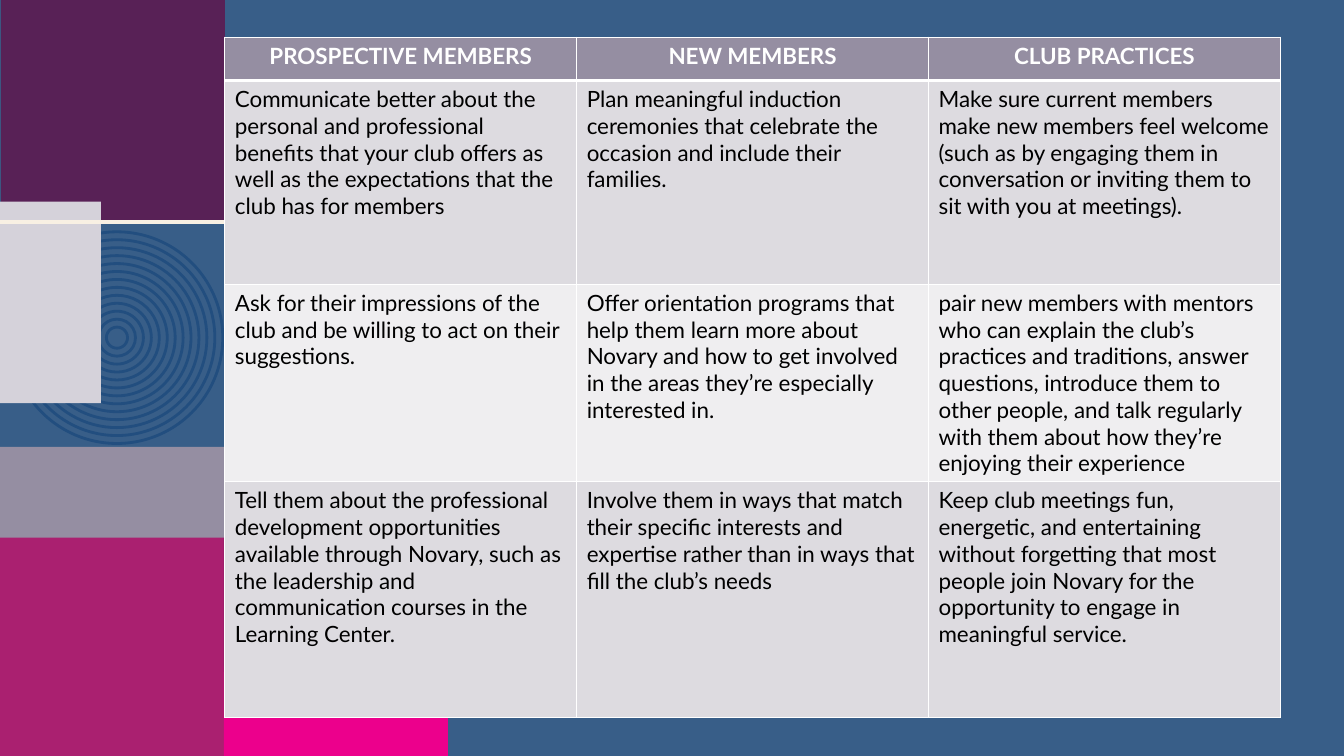
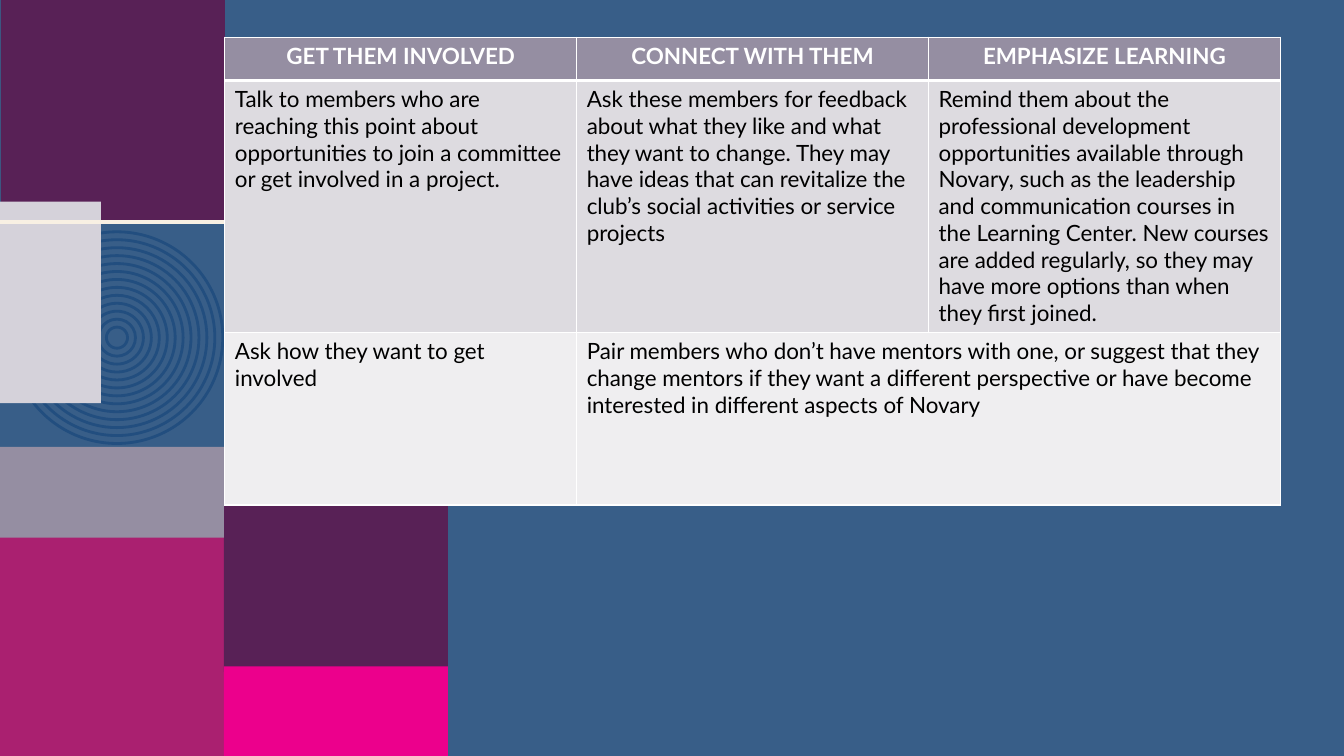
import dataclasses
import math

import lxml.etree
import pptx
import pptx.dml.color
import pptx.enum.shapes
import pptx.enum.text
import pptx.oxml.ns
import pptx.util

SHAPES = pptx.enum.shapes.MSO_SHAPE
CENTER = pptx.enum.text.PP_ALIGN.CENTER
WIDTH, HEIGHT = 13.33, 7.5
UNIT = WIDTH / 6  # side of one decorative tile


@dataclasses.dataclass(frozen=True)
class Theme:
    font: str = "Lato"
    size: int = 16
    background: str = "385E88"
    plum: str = "582156"
    magenta: str = "AA2070"
    pink: str = "EC008C"
    mauve: str = "958EA2"
    pale: str = "D5D2DA"
    ring: str = "224E7F"
    cream: str = "F8F0E3"
    white: str = "FFFFFF"
    black: str = "000000"
    bands: tuple = ("DDDBE0", "EFEEF0")
    thin: int = 1
    ring_line: int = 2
    thick: int = 3


THEME = Theme()

PAGES = [
    {
        "heights": [0.43, 2.02, 1.96, 2.34],
        "rows": [
            ["PROSPECTIVE MEMBERS", "NEW MEMBERS", "CLUB PRACTICES"],
            [
                "Communicate better about the personal and professional benefits that "
                "your club offers as well as the expectations that the club has for members",
                "Plan meaningful induction ceremonies that celebrate the occasion and "
                "include their families.",
                "Make sure current members make new members feel welcome (such as by "
                "engaging them in conversation or inviting them to sit with you at meetings).",
            ],
            [
                "Ask for their impressions of the club and be willing to act on their "
                "suggestions.",
                "Offer orientation programs that help them learn more about Novary and "
                "how to get involved in the areas they’re especially interested in.",
                "pair new members with mentors who can explain the club’s practices and "
                "traditions, answer questions, introduce them to other people, and talk "
                "regularly with them about how they’re enjoying their experience",
            ],
            [
                "Tell them about the professional development opportunities available "
                "through Novary, such as the leadership and communication courses in the "
                "Learning Center.",
                "Involve them in ways that match their specific interests and expertise "
                "rather than in ways that fill the club’s needs",
                "Keep club meetings fun, energetic, and entertaining without forgetting "
                "that most people join Novary for the opportunity to engage in meaningful "
                "service.",
            ],
        ],
    },
    {
        "heights": [0.43, 2.5, 1.71],
        "rows": [
            ["GET THEM INVOLVED", "CONNECT WITH THEM", "EMPHASIZE LEARNING"],
            [
                "Talk to members who are reaching this point about opportunities to join "
                "a committee or get involved in a project.",
                "Ask these members for feedback about what they like and what they want "
                "to change. They may have ideas that can revitalize the club’s social "
                "activities or service projects",
                "Remind them about the professional development opportunities available "
                "through Novary, such as the leadership and communication courses in the "
                "Learning Center. New courses are added regularly, so they may have more "
                "options than when they first joined.",
            ],
            [
                "Ask how they want to get involved",
                "Pair members who don’t have mentors with one, or suggest that they "
                "change mentors if they want a different perspective or have become "
                "interested in different aspects of Novary",
            ],
        ],
    },
]


def inches(*lengths):
    return [pptx.util.Inches(length) for length in lengths]


def rgb(color):
    return pptx.dml.color.RGBColor.from_string(color)


def paint(box, fill=None, line=None, weight=THEME.thin):
    box.shadow.inherit = False
    if fill:
        box.fill.solid()
        box.fill.fore_color.rgb = rgb(fill)
    else:
        box.fill.background()
    if line:
        box.line.color.rgb = rgb(line)
        box.line.width = pptx.util.Pt(weight)
    else:
        box.line.fill.background()


def add_tile(page, left, top, width, height, fill):
    box = page.shapes.add_shape(SHAPES.RECTANGLE, *inches(left, top, width, height))
    paint(box, fill)


def add_rings(page, x, y, widest, count):
    """Draw concentric circles, the smallest a tenth as wide as the widest."""
    step = 0.9 * widest / (count - 1)
    for index in range(count):
        size = widest - index * step
        ring = page.shapes.add_shape(
            SHAPES.OVAL, *inches(x - size / 2, y - size / 2, size, size))
        paint(ring, line=THEME.ring, weight=THEME.ring_line)


def add_half_disc(page, x, y, radius, fill, steps=60):
    """Draw the right half of a disc centred on x, y."""
    angles = [math.pi * (index / steps - 0.5) for index in range(steps + 1)]
    points = [(x + radius * math.cos(angle), y + radius * math.sin(angle))
              for angle in angles]
    builder = page.shapes.build_freeform(*points[0], scale=pptx.util.Inches(1))
    builder.add_line_segments(points[1:], close=True)
    paint(builder.convert_to_shape(), fill)


def add_rule(page, left, right, y, color, weight):
    rule = page.shapes.add_connector(
        pptx.enum.shapes.MSO_CONNECTOR.STRAIGHT, *inches(left, y, right, y))
    rule.line.color.rgb = rgb(color)
    rule.line.width = pptx.util.Pt(weight)
    lxml.etree.SubElement(rule._element.spPr, pptx.oxml.ns.qn("a:effectLst"))


def add_side_pattern(page):
    add_tile(page, 0.01, 0, UNIT, UNIT, THEME.plum)
    add_tile(page, 0, HEIGHT - UNIT, UNIT, UNIT, THEME.magenta)
    add_tile(page, UNIT, 2 * UNIT, UNIT, UNIT, THEME.plum)
    add_tile(page, UNIT, HEIGHT - 0.89, UNIT, 0.89, THEME.pink)
    add_tile(page, 0, 2.19, UNIT, UNIT, THEME.background)
    add_rings(page, 1.16, 3.35, widest=2.1, count=13)
    add_tile(page, 0, 2 * UNIT - 0.01, UNIT, 0.9, THEME.mauve)
    add_half_disc(page, -0.03, 3.3, UNIT / 2, THEME.pale)
    add_rule(page, 0, UNIT, 2.2, THEME.cream, THEME.thick)


def write(frame, text, *, color, bold=False, align=None):
    frame.word_wrap = True
    para = frame.paragraphs[0]
    para.alignment = align
    span = para.add_run()
    span.text = text
    span.font.name = THEME.font
    span.font.size = pptx.util.Pt(THEME.size)
    span.font.bold = bold
    span.font.color.rgb = rgb(color)


def set_borders(cell, color, **weights):
    """Give each side (L, R, T, B) a solid line, ahead of the cell's fill."""
    qn = pptx.oxml.ns.qn
    properties = cell._tc.get_or_add_tcPr()
    for index, side in enumerate("LRTB"):
        weight = pptx.util.Pt(weights.get(side, THEME.thin))
        line = lxml.etree.Element(qn("a:ln" + side), w=str(int(weight)))
        fill = lxml.etree.SubElement(line, qn("a:solidFill"))
        lxml.etree.SubElement(fill, qn("a:srgbClr"), val=color)
        properties.insert(index, line)


def add_practice_table(page, rows, heights):
    """Fill a table; a short row has its last cell run to the right edge."""
    columns = len(rows[0])
    table = page.shapes.add_table(
        len(rows), columns, *inches(2.23, 0.37, 10.47, sum(heights))).table
    table.horz_banding = False
    for number, (texts, height) in enumerate(zip(rows, heights)):
        header = number == 0
        table.rows[number].height = pptx.util.Inches(height)
        for column in range(columns):
            cell = table.cell(number, column)
            cell.fill.solid()
            cell.fill.fore_color.rgb = rgb(
                THEME.mauve if header else THEME.bands[(number - 1) % 2])
            set_borders(cell, THEME.white,
                        T=THEME.thick if number == 1 else THEME.thin,
                        B=THEME.thick if header else THEME.thin)
        if len(texts) < columns:
            table.cell(number, len(texts) - 1).merge(table.cell(number, columns - 1))
        for column, text in enumerate(texts):
            write(table.cell(number, column).text_frame, text, bold=header,
                  color=THEME.white if header else THEME.black,
                  align=CENTER if header else None)


def main():
    deck = pptx.Presentation()
    deck.slide_width, deck.slide_height = inches(WIDTH, HEIGHT)
    backdrop = deck.slide_master.background.fill
    backdrop.solid()
    backdrop.fore_color.rgb = rgb(THEME.background)
    for content in PAGES:
        page = deck.slides.add_slide(deck.slide_layouts[6])
        add_side_pattern(page)
        add_practice_table(page, **content)
    deck.save("out.pptx")


if __name__ == "__main__":
    main()
